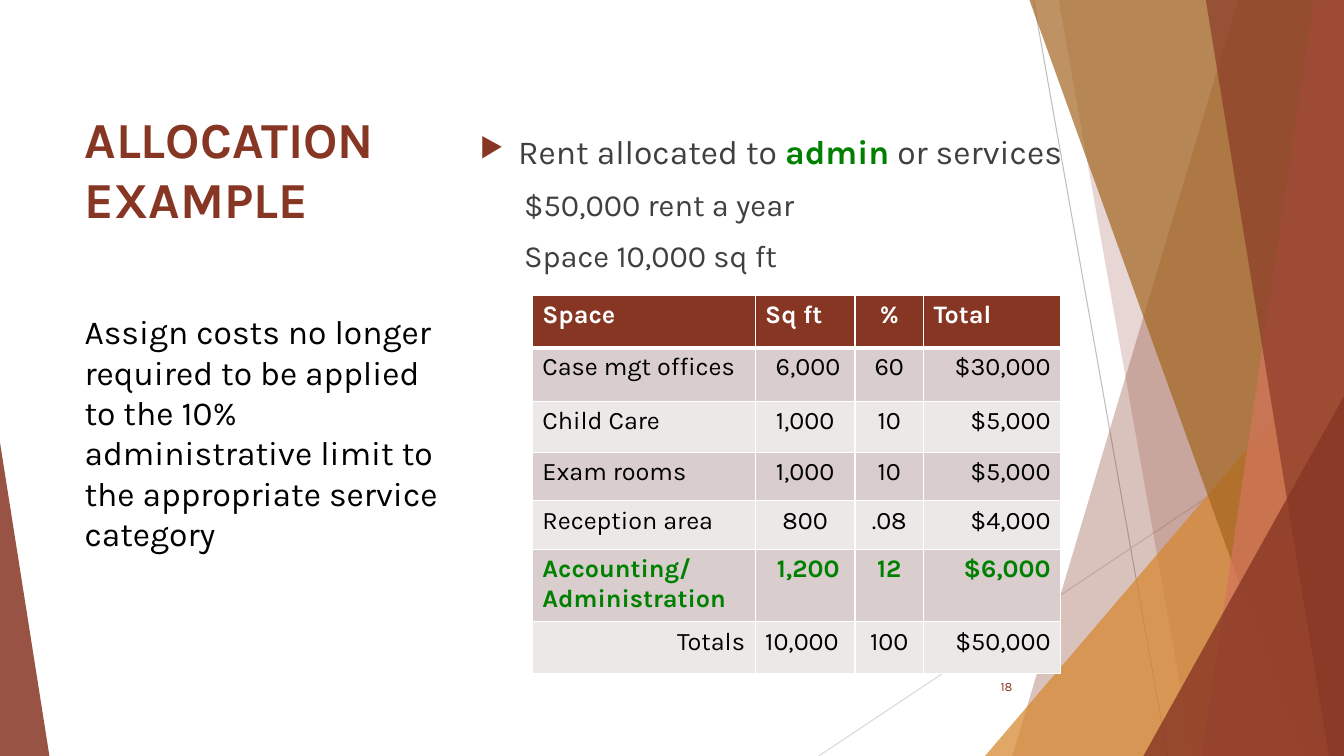
"""Build the rent allocation example slide."""
from lxml import etree
from pptx import Presentation
from pptx.dml.color import RGBColor
from pptx.enum.shapes import MSO_CONNECTOR, MSO_SHAPE
from pptx.enum.text import MSO_ANCHOR, PP_ALIGN
from pptx.oxml import parse_xml
from pptx.oxml.ns import nsdecls, qn
from pptx.util import Inches, Pt

WIDE, HIGH = 13.33, 7.5
RUST, GREEN, GREY, BLACK, WHITE = "873624", "008000", "404040", "000000", "FFFFFF"
LEFT, MID, RIGHT = PP_ALIGN.LEFT, PP_ALIGN.CENTER, PP_ALIGN.RIGHT


def tone(code):
    return RGBColor.from_string(code)


def write(par, text, size, code, bold=False):
    run = par.add_run()
    run.text = text
    for name, value in {"name": "Karla", "size": Pt(size), "bold": bold}.items():
        setattr(run.font, name, value)
    run.font.color.rgb = tone(code)


deck = Presentation()
deck.slide_width, deck.slide_height = Inches(WIDE), Inches(HIGH)
slide = deck.slides.add_slide(deck.slide_layouts[6])
shapes = slide.shapes

for start, end, code in [
    ((10.25, 0), (11.58, HIGH), "BFBFBF"),
    ((WIDE, 4.03), (8.12, HIGH), "D9D9D9"),
]:
    line = shapes.add_connector(
        MSO_CONNECTOR.STRAIGHT, *[Inches(n) for n in start + end])
    line.line.color.rgb = tone(code)
    line.line.width = Pt(0.75)
    etree.SubElement(line._element.spPr, qn("a:effectLst"))

# Bands give top and bottom x; triangles give left, top, width and tip.
facets = [
    ((12.28, 10.04), RUST, 30),
    ((10.5, 11.83), RUST, 20),
    ((9.77, 3.33, 3.56, 1), "D6862D", 72),
    ((10.21, 12.91), "A36520", 70),
    ((13.03, 11.92), "D4745E", 70),
    ((11.96, 13.18), RUST, 65),
    ((11.34, 3.93, 1.99, 1), RUST, 80),
    ((0, 4.39, 0.49, 0), RUST, 85),
]
for form, code, alpha in facets:
    if len(form) == 2:
        top, base = form
        path = shapes.build_freeform(Inches(top), 0)
        path.add_line_segments([
            (Inches(x), Inches(y))
            for x, y in [(WIDE, 0), (WIDE, HIGH), (base, HIGH)]])
        facet = path.convert_to_shape()
    else:
        x, y, width, tip = form
        facet = shapes.add_shape(
            MSO_SHAPE.ISOSCELES_TRIANGLE,
            Inches(x), Inches(y), Inches(width), Inches(HIGH - y))
        facet.adjustments[0] = tip
    facet.shadow.inherit = False
    facet.line.fill.background()
    facet.fill.solid()
    facet.fill.fore_color.rgb = tone(code)
    tint = facet._element.spPr.find(".//" + qn("a:srgbClr"))
    etree.SubElement(tint, qn("a:alpha"), val=str(alpha * 1000))

frames = []
for box, anchor in [
    ((0.74, 0.97, 4.22, 1.35), MSO_ANCHOR.BOTTOM),
    ((4.66, 1.25, 6.35, 1.6), MSO_ANCHOR.TOP),
    ((0.74, 3.04, 3.74, 2.83), MSO_ANCHOR.TOP),
    ((9.39, 6.61, 0.75, 0.4), MSO_ANCHOR.MIDDLE),
]:
    frame = shapes.add_textbox(*[Inches(n) for n in box]).text_frame
    frame.word_wrap = True
    frame.vertical_anchor = anchor
    frames.append(frame)
title, body, note, number = frames

par = title.paragraphs[0]
write(par, "ALLOCATION", 36, RUST, True)
par.add_line_break()
write(par, "EXAMPLE", 36, RUST, True)

par = body.paragraphs[0]
par.space_before = Pt(10)
write(par, "Rent allocated to ", 24, GREY)
write(par, "admin", 24, GREEN, True)
write(par, " or services", 24, GREY)
props = par._p.get_or_add_pPr()
props.set("marL", str(Inches(0.38)))
props.set("indent", str(Inches(-0.38)))
for bullet in [
    f'<a:buClr {nsdecls("a")}><a:srgbClr val="{RUST}"/></a:buClr>',
    f'<a:buSzPct {nsdecls("a")} val="80000"/>',
    f'<a:buChar {nsdecls("a")} char="▶"/>',
]:
    props.append(parse_xml(bullet))
for text in ["$50,000 rent a year", "Space 10,000 sq ft"]:
    par = body.add_paragraph()
    par.space_before = Pt(10)
    par._p.get_or_add_pPr().set("marL", str(Inches(0.44)))
    write(par, text, 22, GREY)

par = note.paragraphs[0]
par.space_before = Pt(10)
write(par, "Assign costs no longer required to be applied to the 10% "
      "administrative limit to the appropriate service category", 24, BLACK)

par = number.paragraphs[0]
par.alignment = RIGHT
write(par, "18", 9, RUST)

rows = [
    ("Space", "Sq ft", "%", "Total"),
    ("Case mgt offices", " 6,000", "60", "$30,000"),
    ("Child Care", "1,000", "10", "$5,000"),
    ("Exam rooms", "1,000", "10", "$5,000"),
    ("Reception area", "800", ".08", "$4,000"),
    ("Accounting/\nAdministration", " 1,200", "12", "$6,000"),
    ("Totals", "10,000", "100", "$50,000"),
]
sides = {0: (LEFT, LEFT, MID, LEFT), 6: (RIGHT, LEFT, MID, RIGHT)}
inks = {0: WHITE, 5: GREEN}
grid = shapes.add_table(
    len(rows), 4, Inches(5.28), Inches(2.93), Inches(5.24), Inches(3.75)).table
for col, width in zip(grid.columns, (2.21, 0.99, 0.68, 1.36)):
    col.width = Inches(width)
for row, height in zip(grid.rows, (0.52, 0.53, 0.51, 0.48, 0.48, 0.72, 0.51)):
    row.height = Inches(height)
for r, row in enumerate(rows):
    for c, text in enumerate(row):
        cell = grid.cell(r, c)
        props = cell._tc.get_or_add_tcPr()
        for edge in "LRTB":
            thick = (r, edge) in [(0, "B"), (1, "T")]
            props.append(parse_xml(
                f'<a:ln{edge} {nsdecls("a")} w="{Pt(3 if thick else 1)}">'
                f'<a:solidFill><a:srgbClr val="{WHITE}"/></a:solidFill></a:ln{edge}>'))
        cell.fill.solid()
        cell.fill.fore_color.rgb = tone(
            RUST if r == 0 else "D9CECD" if r % 2 else "EDE8E8")
        for n, part in enumerate(text.split("\n")):
            frame = cell.text_frame
            par = frame.add_paragraph() if n else frame.paragraphs[0]
            par.alignment = sides.get(r, (LEFT, MID, MID, RIGHT))[c]
            write(par, part, 18, inks.get(r, BLACK), r in inks)

deck.save("out.pptx")
